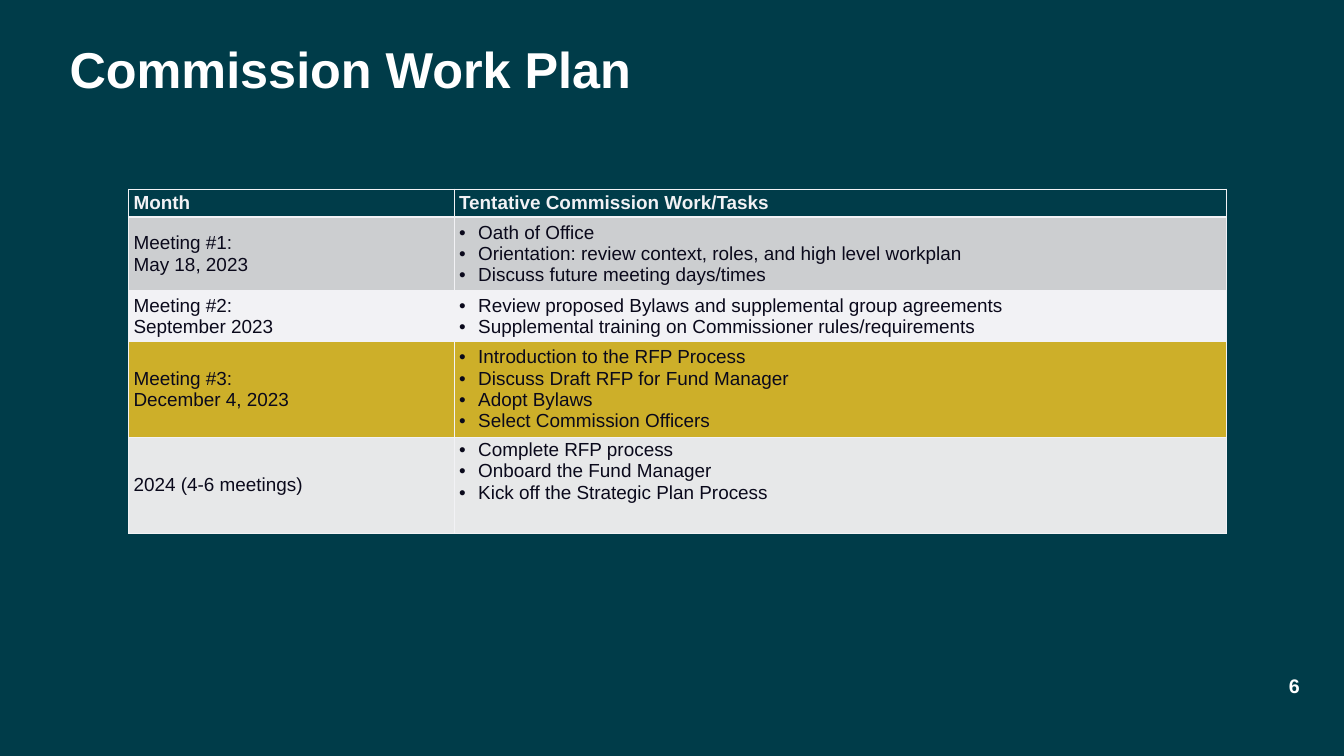
from lxml.etree import SubElement
from pptx import Presentation
from pptx.dml.color import RGBColor
from pptx.enum.text import MSO_ANCHOR, PP_ALIGN
from pptx.oxml.ns import qn
from pptx.util import Inches, Pt

COLORS = {
    "background": "003C49",
    "white": "FFFFFF",
    "light": "F2F2F5",
    "ink": "0A091B",
    "gray": "CCCED0",
    "gold": "CDAF29",
    "pale": "E7E8E9",
}
COLUMN_WIDTHS = [6.46, 15.32]
ROWS = [
    (0.56, "background", ["Month"], ["Tentative Commission Work/Tasks"]),
    (1.46, "gray", ["Meeting #1:", "May 18, 2023"], [
        "Oath of Office",
        "Orientation: review context, roles, and high level workplan",
        "Discuss future meeting days/times",
    ]),
    (1.0, "light", ["Meeting #2:", "September 2023"], [
        "Review proposed Bylaws and supplemental group agreements",
        "Supplemental training on Commissioner rules/requirements",
    ]),
    (1.89, "gold", ["Meeting #3:", "December 4, 2023"], [
        "Introduction to the RFP Process",
        "Discuss Draft RFP for Fund Manager",
        "Adopt Bylaws",
        "Select Commission Officers",
    ]),
    (1.91, "pale", ["2024 (4-6 meetings)"], [
        "Complete RFP process",
        "Onboard the Fund Manager",
        "Kick off the Strategic Plan Process",
    ]),
]


def color(name):
    return RGBColor.from_string(COLORS[name])


def add_run(paragraph, text, size, color_name, bold):
    run = paragraph.add_run()
    run.text = text
    formats = {"name": "Arial", "size": Pt(size), "bold": bold}
    for attribute, value in formats.items():
        setattr(run.font, attribute, value)
    run.font.color.rgb = color(color_name)


def add_title(slide, text):
    title = slide.shapes.title
    place = {"left": 1.28, "top": 0.83, "width": 24.06, "height": 1.19}
    for attribute, value in place.items():
        setattr(title, attribute, Inches(value))
    title.text_frame.word_wrap = True
    title.text_frame.vertical_anchor = MSO_ANCHOR.MIDDLE
    paragraph = title.text_frame.paragraphs[0]
    paragraph.alignment = PP_ALIGN.LEFT
    paragraph.line_spacing = 0.9
    add_run(paragraph, text, 72, "white", True)


def add_page_number(slide, text):
    shape = slide.shapes.add_textbox(Inches(23.36), Inches(13.33), Inches(2.53), Inches(0.57))
    shape.text_frame.word_wrap = True
    paragraph = shape.text_frame.paragraphs[0]
    paragraph.alignment = PP_ALIGN.RIGHT
    add_run(paragraph, text, 28, "white", True)


def add_bullet(paragraph):
    properties = paragraph._p.get_or_add_pPr()
    properties.set("marL", str(Inches(0.38)))
    properties.set("indent", str(Inches(-0.38)))
    SubElement(properties, qn("a:buFont"), typeface="Arial")
    SubElement(properties, qn("a:buChar"), char="•")


def set_borders(cell, widths):
    properties = cell._tc.get_or_add_tcPr()
    for side, width in widths.items():
        line = SubElement(properties, qn(f"a:ln{side}"), w=str(Pt(width)))
        fill = SubElement(line, qn("a:solidFill"))
        SubElement(fill, qn("a:srgbClr"), val=COLORS["light"])


def fill_cell(cell, lines, fill_name, row_index, bulleted):
    header = row_index == 0
    set_borders(cell, {
        "L": 1,
        "R": 1,
        "T": 3 if row_index == 1 else 1,
        "B": 3 if header else 1,
    })
    cell.fill.solid()
    cell.fill.fore_color.rgb = color(fill_name)
    cell.vertical_anchor = MSO_ANCHOR.MIDDLE
    frame = cell.text_frame
    for index, line in enumerate(lines):
        paragraph = frame.add_paragraph() if index else frame.paragraphs[0]
        if bulleted:
            add_bullet(paragraph)
        add_run(paragraph, line, 27, "light" if header else "ink", header)


def add_work_plan(slide):
    frame = slide.shapes.add_table(
        len(ROWS), len(COLUMN_WIDTHS), Inches(2.55), Inches(3.75),
        Inches(sum(COLUMN_WIDTHS)), Inches(sum(row[0] for row in ROWS)),
    )
    table = frame.table
    for column, width in zip(table.columns, COLUMN_WIDTHS):
        column.width = Inches(width)
    for row_index, (height, fill_name, month, tasks) in enumerate(ROWS):
        table.rows[row_index].height = Inches(height)
        fill_cell(table.cell(row_index, 0), month, fill_name, row_index, False)
        fill_cell(table.cell(row_index, 1), tasks, fill_name, row_index, row_index > 0)
    table.cell(len(ROWS) - 1, 1).vertical_anchor = MSO_ANCHOR.TOP


def main():
    presentation = Presentation()
    presentation.slide_width = Inches(26.67)
    presentation.slide_height = Inches(15)
    slide = presentation.slides.add_slide(presentation.slide_layouts[5])
    slide.background.fill.solid()
    slide.background.fill.fore_color.rgb = color("background")
    add_title(slide, "Commission Work Plan")
    add_page_number(slide, "6")
    add_work_plan(slide)
    presentation.save("out.pptx")


if __name__ == "__main__":
    main()
